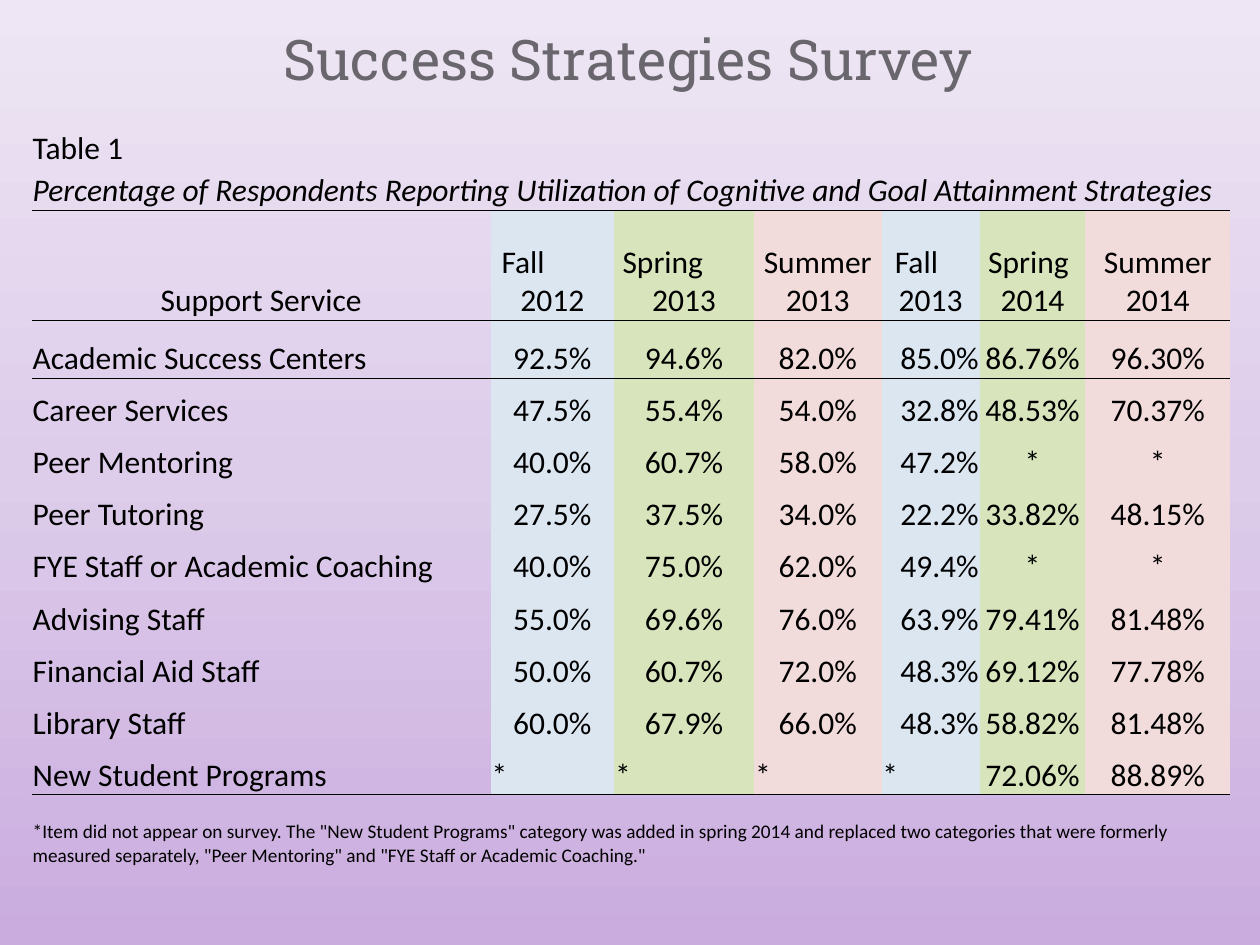
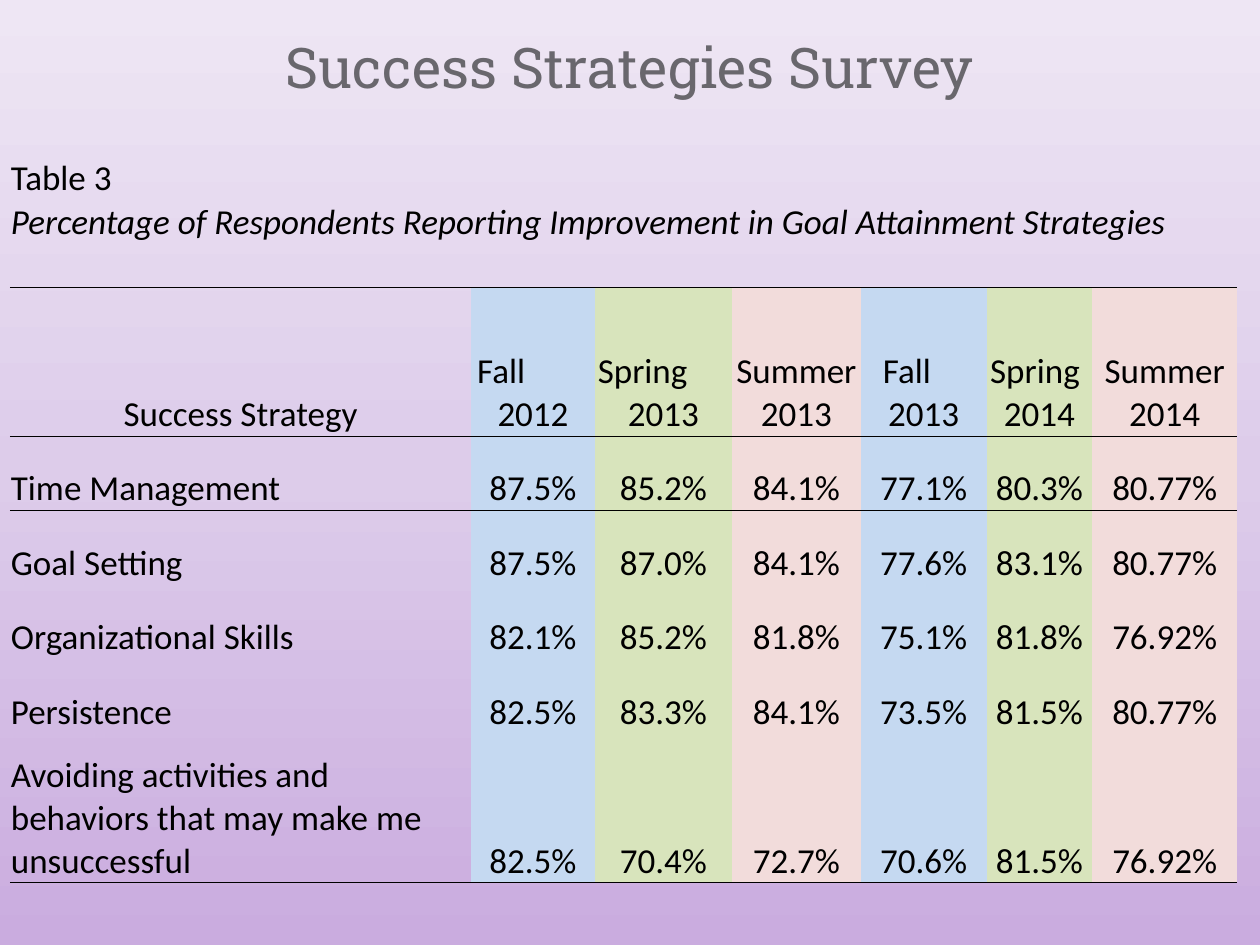
from copy import deepcopy
from dataclasses import dataclass

from lxml import etree
from pptx import Presentation
from pptx.dml.color import RGBColor
from pptx.enum.text import MSO_ANCHOR, PP_ALIGN
from pptx.oxml.ns import qn
from pptx.util import Cm, Pt

LEFT, CENTER, RIGHT = PP_ALIGN.LEFT, PP_ALIGN.CENTER, PP_ALIGN.RIGHT
BOTTOM = MSO_ANCHOR.BOTTOM
PLAIN_TABLE_STYLE = "{2D5ABB26-0587-4C30-8999-92F81FD0307C}"
BLANK_LAYOUT = 6


@dataclass(frozen=True)
class Theme:
    title_font: str = "Roboto Slab"
    body_font: str = "Calibri"
    title_size: int = 32
    note_size: int = 11
    title_color: str = "69676D"
    ink: str = "000000"
    backdrop: tuple = ("CAACDF", "DDCCEA", "EEE6F4")
    pale_blue: str = "DCE6F1"
    sky_blue: str = "C5D9F1"
    green: str = "D8E4BC"
    pink: str = "F2DCDB"
    rule_width: float = 0.5


THEME = Theme()
CELL_FORMAT = {
    "margin_left": Cm(0.02),
    "margin_right": Cm(0.02),
    "margin_top": Cm(0.02),
    "margin_bottom": 0,
    "vertical_anchor": BOTTOM,
}


@dataclass
class Survey:
    """Content and measures of one survey table; lengths in centimetres."""
    number: str
    caption: str
    subject: str
    left: float
    top: float
    widths: list
    heights: list
    size: int
    fall_fill: str
    term_indents: list  # None centres the season above its year
    results: list
    fall_2013_align: int = CENTER
    caption_gap: float = 0
    note: str = ""


TERMS = [("Fall", "2012"), ("Spring", "2013"), ("Summer", "2013"),
         ("Fall", "2013"), ("Spring", "2014"), ("Summer", "2014")]
CAPTION_ROW, HEADING_ROW, FIRST_RESULT_ROW = 1, 2, 3
FALL_2013_COLUMN = 4


class Deck:
    def __init__(self, theme):
        self.theme = theme
        self.prs = Presentation()
        self.prs.slide_width, self.prs.slide_height = Cm(25.4), Cm(19.05)
        self.slide = None

    def new_slide(self):
        layout = self.prs.slide_layouts[BLANK_LAYOUT]
        self.slide = self.prs.slides.add_slide(layout)
        fill = self.slide.background.fill
        fill.gradient()
        fill.gradient_angle = 90
        first_stop = next(self.slide.element.iter(qn("a:gs")))
        first_stop.addnext(deepcopy(first_stop))
        for i, (stop, color) in enumerate(
                zip(fill.gradient_stops, self.theme.backdrop)):
            stop.color.rgb = RGBColor.from_string(color)
            stop.position = i / 2

    def add_text(self, paragraph, text, size, align=LEFT, font=None,
                 color=None, italic=False):
        paragraph.alignment = align
        run = paragraph.add_run()
        run.text = text
        values = {"name": font or self.theme.body_font, "size": Pt(size),
                  "italic": italic}
        for name, value in values.items():
            setattr(run.font, name, value)
        run.font.color.rgb = RGBColor.from_string(color or self.theme.ink)

    def title(self, text, left, top, width, height):
        box = self.slide.shapes.add_textbox(
            Cm(left), Cm(top), Cm(width), Cm(height))
        frame = box.text_frame
        frame.word_wrap = True
        frame.vertical_anchor = BOTTOM
        self.add_text(frame.paragraphs[0], text, self.theme.title_size, CENTER,
                      self.theme.title_font, self.theme.title_color)

    def rule(self, cell, side):
        line = etree.Element(qn(f"a:{side}"),
                             w=str(Pt(self.theme.rule_width)))
        fill = etree.SubElement(line, qn("a:solidFill"))
        etree.SubElement(fill, qn("a:srgbClr"), val=self.theme.ink)
        cell._tc.get_or_add_tcPr().insert(0, line)

    def plain_table(self, survey):
        frame = self.slide.shapes.add_table(
            len(survey.heights), len(survey.widths), Cm(survey.left),
            Cm(survey.top), Cm(sum(survey.widths)), Cm(sum(survey.heights)))
        table = frame.table
        table.first_row = table.horz_banding = False
        next(frame._element.iter(qn("a:tableStyleId"))).text = PLAIN_TABLE_STYLE
        for column, width in zip(table.columns, survey.widths):
            column.width = Cm(width)
        for row, height in zip(table.rows, survey.heights):
            row.height = Cm(height)
        return table

    def survey_table(self, survey):
        table = self.plain_table(survey)
        last_result = HEADING_ROW + len(survey.results)
        ruled_rows = (CAPTION_ROW, HEADING_ROW, last_result)
        term_fills = [survey.fall_fill, self.theme.green, self.theme.pink] * 2

        # Cell margins, column bands and horizontal rules
        for r in range(len(survey.heights)):
            for c in range(len(survey.widths)):
                cell = table.cell(r, c)
                for name, value in CELL_FORMAT.items():
                    setattr(cell, name, value)
                if c and HEADING_ROW <= r <= last_result:
                    cell.fill.solid()
                    cell.fill.fore_color.rgb = RGBColor.from_string(
                        term_fills[c - 1])
                else:
                    cell.fill.background()
                if r in ruled_rows:
                    self.rule(cell, "lnB")
                if r - 1 in ruled_rows:
                    self.rule(cell, "lnT")

        def put(r, c, text, align=LEFT, size=survey.size, italic=False):
            self.add_text(table.cell(r, c).text_frame.paragraphs[0], text,
                          size, align, italic=italic)

        def span(r):
            table.cell(r, 0).merge(table.cell(r, len(survey.widths) - 1))

        # Number, caption and headings
        put(0, 0, survey.number)
        span(CAPTION_ROW)
        put(CAPTION_ROW, 0, survey.caption, italic=True)
        table.cell(CAPTION_ROW, 0).margin_bottom = Cm(survey.caption_gap)
        put(HEADING_ROW, 0, survey.subject, CENTER)
        for c, ((season, year), indent) in enumerate(
                zip(TERMS, survey.term_indents), start=1):
            put(HEADING_ROW, c, season, CENTER if indent is None else LEFT)
            heading = table.cell(HEADING_ROW, c).text_frame
            if indent:
                heading.paragraphs[0]._p.get_or_add_pPr().set(
                    "marL", str(Cm(indent)))
            self.add_text(heading.add_paragraph(), year, survey.size, CENTER)

        # Results
        for r, (label, shares) in enumerate(survey.results, FIRST_RESULT_ROW):
            put(r, 0, label)
            for c, share in enumerate(shares.split(), start=1):
                align = CENTER
                if share == "*" and c <= FALL_2013_COLUMN:
                    align = LEFT
                elif c == FALL_2013_COLUMN:
                    align = survey.fall_2013_align
                put(r, c, share, align)

        if survey.note:
            span(last_result + 1)
            put(last_result + 1, 0, survey.note, size=self.theme.note_size)


UTILIZATION = Survey(
    number="Table 1",
    caption="Percentage of Respondents Reporting Utilization of Cognitive "
            "and Goal Attainment Strategies",
    subject="Support Service",
    left=0.64, top=2.34,
    widths=[9.25, 2.49, 2.82, 2.57, 1.98, 2.13, 2.92],
    heights=[1.04, 0.86, 2.21, 1.17] + [1.05] * 8 + [1.47],
    size=18,
    fall_fill=THEME.pale_blue,
    term_indents=[0.2, 0.15, None, 0.25, 0.15, None],
    fall_2013_align=RIGHT,
    results=[
        ("Academic Success Centers", "92.5% 94.6% 82.0% 85.0% 86.76% 96.30%"),
        ("Career Services", "47.5% 55.4% 54.0% 32.8% 48.53% 70.37%"),
        ("Peer Mentoring", "40.0% 60.7% 58.0% 47.2% * *"),
        ("Peer Tutoring", "27.5% 37.5% 34.0% 22.2% 33.82% 48.15%"),
        ("FYE Staff or Academic Coaching", "40.0% 75.0% 62.0% 49.4% * *"),
        ("Advising Staff", "55.0% 69.6% 76.0% 63.9% 79.41% 81.48%"),
        ("Financial Aid Staff", "50.0% 60.7% 72.0% 48.3% 69.12% 77.78%"),
        ("Library Staff", "60.0% 67.9% 66.0% 48.3% 58.82% 81.48%"),
        ("New Student Programs", "* * * * 72.06% 88.89%"),
    ],
    note='*Item did not appear on survey. The "New Student Programs" category '
         'was added in spring 2014 and replaced two categories that were '
         'formerly measured separately, "Peer Mentoring" and "FYE Staff or '
         'Academic Coaching."',
)

IMPROVEMENT = Survey(
    number="Table 3",
    caption="Percentage of Respondents Reporting Improvement in Goal "
            "Attainment Strategies",
    subject="Success Strategy",
    left=0.2, top=2.54,
    widths=[9.3, 2.49, 2.77, 2.59, 2.54, 2.13, 2.92],
    heights=[1.5, 1.75, 3] + [1.5] * 4 + [3],
    size=20,
    fall_fill=THEME.sky_blue,
    term_indents=[0.1, 0.04, None, 0.43, 0.05, None],
    caption_gap=0.87,
    results=[
        ("Time Management", "87.5% 85.2% 84.1% 77.1% 80.3% 80.77%"),
        ("Goal Setting", "87.5% 87.0% 84.1% 77.6% 83.1% 80.77%"),
        ("Organizational Skills", "82.1% 85.2% 81.8% 75.1% 81.8% 76.92%"),
        ("Persistence", "82.5% 83.3% 84.1% 73.5% 81.5% 80.77%"),
        ("Avoiding activities and behaviors that may make me unsuccessful",
         "82.5% 70.4% 72.7% 70.6% 81.5% 76.92%"),
    ],
)


def main():
    deck = Deck(THEME)
    title_places = [(1.24, 0.08, 22.86, 1.9), (1.27, 0.43, 22.86, 1.7)]
    for survey, place in zip((UTILIZATION, IMPROVEMENT), title_places):
        deck.new_slide()
        deck.title("Success Strategies Survey", *place)
        deck.survey_table(survey)
    deck.prs.save("out.pptx")


if __name__ == "__main__":
    main()
